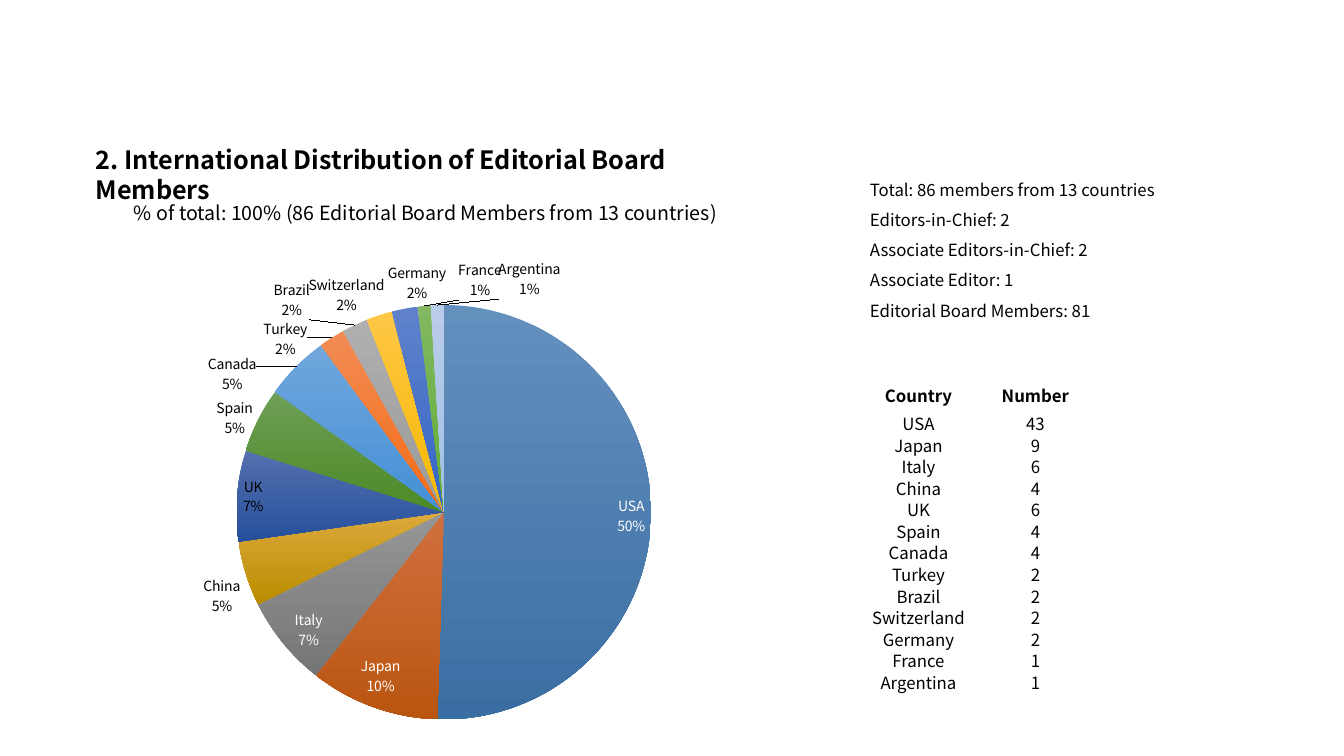
from lxml import etree
from pptx import Presentation
from pptx.chart.data import CategoryChartData
from pptx.dml.color import RGBColor
from pptx.enum.chart import XL_CHART_TYPE, XL_LABEL_POSITION
from pptx.enum.text import MSO_ANCHOR, MSO_AUTO_SIZE, PP_ALIGN
from pptx.oxml import parse_xml
from pptx.oxml.ns import qn
from pptx.util import Inches, Pt

# Content
TITLE = "2. International Distribution of Editorial Board Members"
SUBTITLE = "% of total: 100% (86 Editorial Board Members from 13 countries)"
ROLES = [
    "Total: 86 members from 13 countries",
    "Editors-in-Chief: 2",
    "Associate Editors-in-Chief: 2",
    "Associate Editor: 1",
    "Editorial Board Members: 81",
]
HEADINGS = ("Country", "Number")
MEMBERS = {
    "USA": 43, "Japan": 9, "Italy": 6, "China": 4, "UK": 6, "Spain": 4, "Canada": 4,
    "Turkey": 2, "Brazil": 2, "Switzerland": 2, "Germany": 2, "France": 1, "Argentina": 1,
}

# Look
FONT = "Noto Sans CJK SC"
COLORS = {"text": "000000", "light": "FFFFFF"}
SLICE_GRADIENTS = [  # top and bottom colour of each slice
    ("6490BE", "3A6EA2"), ("D0703F", "BA5510"), ("969696", "767676"), ("DCA93C", "B98D00"),
    ("5570B0", "26509B"), ("6E9F56", "4C8A26"), ("70A6DD", "4590D6"), ("F18C55", "F56B14"),
    ("AFAFAF", "9A9A9A"), ("FFC746", "F5B800"), ("5F82CB", "3465C6"), ("81B861", "62AD36"),
    ("B9CCE9", "A3C0E6"),
]
INSIDE_LIGHT = ("USA", "Japan", "Italy")
INSIDE = INSIDE_LIGHT + ("UK",)
LABEL_SHIFTS = {  # shares of the chart's width and height
    "Japan": (-0.02, -0.01), "Italy": (0.01, 0.02), "Spain": (0, 0.04),
    "Canada": (-0.05, 0.06), "Turkey": (-0.03, 0.05), "Brazil": (-0.06, 0),
    "Switzerland": (0.01, 0.01), "Germany": (0.06, 0), "France": (0.11, 0),
    "Argentina": (0.13, 0),
}
PLOT_AREA = {"x": 0.098, "y": 0.093, "w": 0.816, "h": 0.803}

# Grid
LEFT, RIGHT = 0.84, 8.53
COLUMN, HEAD_ROW, ROW = 1.16, 0.31, 0.214
CHART_NS = "http://schemas.openxmlformats.org/drawingml/2006/chart"


def style(font, size, color="text", bold=False):
    for key, value in {"name": FONT, "size": Pt(size), "bold": bold}.items():
        setattr(font, key, value)
    font.color.rgb = RGBColor.from_string(COLORS[color])


def add_text(lines, box, size, bold=False, spacing=None):
    frame = slide.shapes.add_textbox(*map(Inches, box)).text_frame
    frame.word_wrap = True
    frame.auto_size = MSO_AUTO_SIZE.SHAPE_TO_FIT_TEXT
    for i, line in enumerate(lines):
        paragraph = frame.paragraphs[0] if i == 0 else frame.add_paragraph()
        run = paragraph.add_run()
        run.text = line
        paragraph.line_spacing = spacing
        style(run.font, size, bold=bold)


def manual_layout(parts, inner=False):
    target = '<c:layoutTarget val="inner"/>' if inner else ""
    modes = '<c:xMode val="edge"/><c:yMode val="edge"/>' if inner else ""
    values = "".join(f'<c:{key} val="{value}"/>' for key, value in parts.items())
    return parse_xml(f'<c:layout xmlns:c="{CHART_NS}"><c:manualLayout>'
                     f"{target}{modes}{values}</c:manualLayout></c:layout>")


def show_name_and(figure, labels):
    shown = ("showCatName", figure)
    for tag in ("showLegendKey", "showVal", "showCatName", "showSerName", "showPercent"):
        labels.find(qn(f"c:{tag}")).set("val", str(int(tag in shown)))
    separator = etree.Element(qn("c:separator"))
    separator.text = "\n"
    labels.find(qn("c:showBubbleSize")).addnext(separator)


presentation = Presentation()
presentation.slide_width, presentation.slide_height = Inches(13.33), Inches(7.5)
slide = presentation.slides.add_slide(presentation.slide_layouts[6])

# Board roles
add_text(ROLES, (RIGHT, 1.63, 4.26, 1.62), 12, spacing=1.5)

# Pie of country shares
total = sum(MEMBERS.values())
shares = CategoryChartData()
shares.categories = list(MEMBERS)
shares.add_series("Series 1", [round(100 * n / total) for n in MEMBERS.values()])
pie = slide.shapes.add_chart(
    XL_CHART_TYPE.PIE, *map(Inches, (LEFT, 2.55, 7.04, 5.12)), shares).chart
pie.has_title = pie.has_legend = False
style(pie.font, 10)
plot_area = pie._chartSpace.chart.plotArea
for old_layout in plot_area.findall(qn("c:layout")):
    plot_area.remove(old_layout)
plot_area.insert(0, manual_layout(PLOT_AREA, inner=True))
pie.plots[0].vary_by_categories = True

series = pie.plots[0].series[0]
style(series.data_labels.font, 10)
series_labels = series._element.find(qn("c:dLbls"))
show_name_and("showPercent", series_labels)
leaders = series_labels.find(qn("c:showLeaderLines"))
if leaders is None:
    leaders = etree.SubElement(series_labels, qn("c:showLeaderLines"))
leaders.set("val", "1")

for i, (country, gradient) in enumerate(zip(MEMBERS, SLICE_GRADIENTS)):
    point = series.points[i]
    fill = point.format.fill
    fill.gradient()
    fill.gradient_angle = 270
    for stop, color in zip(fill.gradient_stops, gradient):
        stop.color.rgb = RGBColor.from_string(color)
    point.format.line.fill.background()
    label = point.data_label
    style(label.font, 10, "light" if country in INSIDE_LIGHT else "text")
    label.position = (XL_LABEL_POSITION.INSIDE_END if country in INSIDE
                      else XL_LABEL_POSITION.OUTSIDE_END)
    label_xml = series_labels.findall(qn("c:dLbl"))[i]
    # The rounded shares add up to 99, so the USA label shows its value
    if country == "USA":
        show_name_and("showVal", label_xml)
        label_xml.find(qn("c:idx")).addnext(parse_xml(
            f'<c:numFmt xmlns:c="{CHART_NS}" formatCode="0&quot;%&quot;" sourceLinked="0"/>'))
    else:
        show_name_and("showPercent", label_xml)
    if country in LABEL_SHIFTS:
        shift = dict(zip("xy", LABEL_SHIFTS[country]))
        label_xml.find(qn("c:idx")).addnext(manual_layout(shift))

# Members by country
rows = [HEADINGS, *MEMBERS.items()]
height = HEAD_ROW + ROW * len(MEMBERS)
table = slide.shapes.add_table(
    len(rows), 2, *map(Inches, (RIGHT, 3.76, 2 * COLUMN, height))).table
table.first_row = table.horz_banding = False
table._tbl.tblPr.find(qn("a:tableStyleId")).text = "{2D5ABB26-0587-4C30-8999-92F81FD0307C}"
for column in table.columns:
    column.width = Inches(COLUMN)
cell_format = {"margin_left": Inches(0.01), "margin_right": Inches(0.01),
               "margin_top": Inches(0.01), "margin_bottom": 0,
               "vertical_anchor": MSO_ANCHOR.MIDDLE}
for r, row in enumerate(rows):
    table.rows[r].height = Inches(ROW if r else HEAD_ROW)
    for c, value in enumerate(row):
        cell = table.cell(r, c)
        for key, setting in cell_format.items():
            setattr(cell, key, setting)
        cell.fill.background()
        paragraph = cell.text_frame.paragraphs[0]
        paragraph.alignment = PP_ALIGN.CENTER
        run = paragraph.add_run()
        run.text = str(value)
        style(run.font, 12, bold=r == 0)

# Headings
add_text([TITLE], (LEFT + 0.01, 1.38, 6.85, 0.4), 18, bold=True)
add_text([SUBTITLE], (1.23, 1.94, 7.55, 0.34), 14)

presentation.save("out.pptx")
